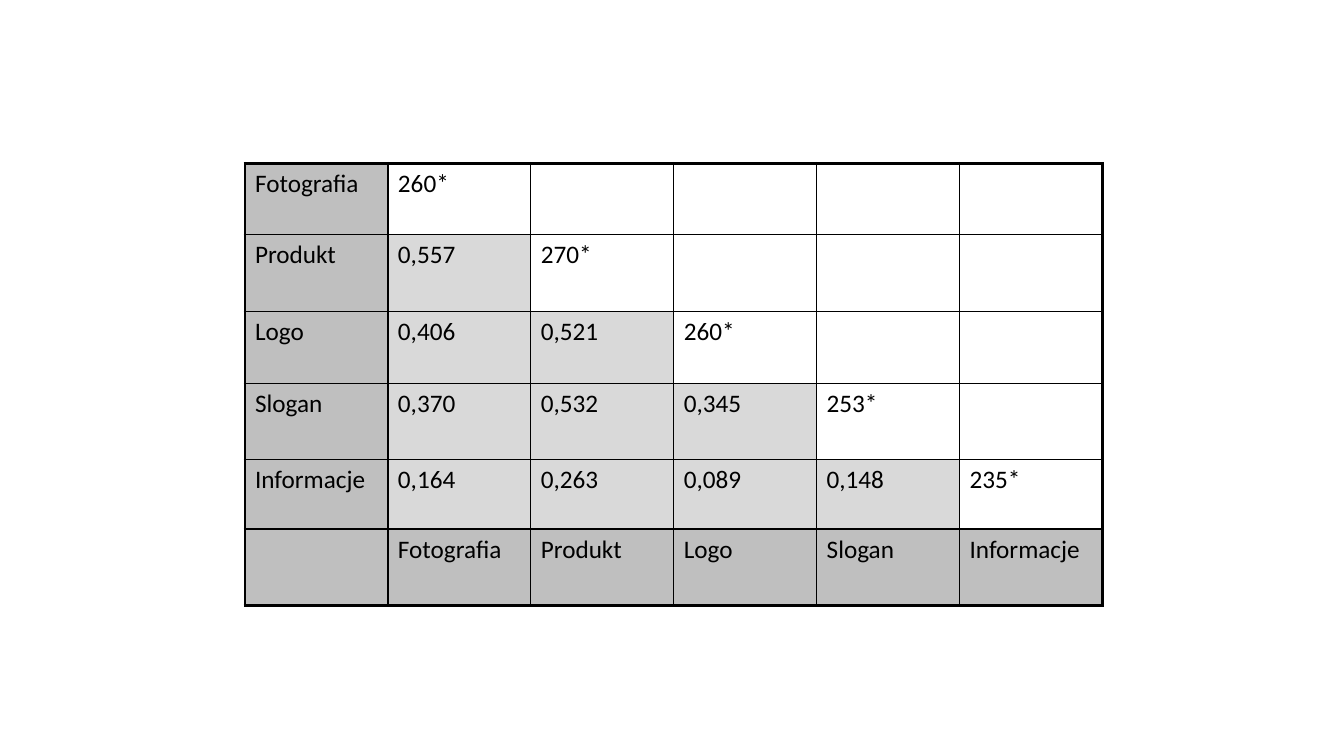
from dataclasses import dataclass

from lxml import etree
from pptx import Presentation
from pptx import util as u
from pptx.dml.color import RGBColor
from pptx.oxml import ns


@dataclass(frozen=True)
class Theme:
    font: str = "Calibri"
    size: float = 18
    ink: str = "000000"
    header: str = "BFBFBF"
    value: str = "D9D9D9"
    outer_line: float = 2.25
    inner_line: float = 1


theme = Theme()

labels = ["Fotografia", "Produkt", "Logo", "Slogan", "Informacje"]
# Lower triangle: the last entry of each row lies on the diagonal.
triangle = [
    ["260*"],
    ["0,557", "270*"],
    ["0,406", "0,521", "260*"],
    ["0,370", "0,532", "0,345", "253*"],
    ["0,164", "0,263", "0,089", "0,148", "235*"],
]
rows = [[label, *values] for label, values in zip(labels, triangle)]
rows.append(["", *labels])
row_heights = [51.2, 54.7, 51.2, 54.7, 49.5, 54.7]
col_width = 102.1
n = len(rows)


def add_border(cell, side, width):
    tc_pr = cell._tc.get_or_add_tcPr()
    ln = etree.SubElement(tc_pr, ns.qn(f"a:ln{side}"), w=str(u.Pt(width)))
    fill = etree.SubElement(ln, ns.qn("a:solidFill"))
    etree.SubElement(fill, ns.qn("a:srgbClr"), val=theme.ink)


prs = Presentation()
prs.slide_width, prs.slide_height = u.Pt(960), u.Pt(540)
s = prs.slides.add_slide(prs.slide_layouts[6])

frame = s.shapes.add_table(n, n, u.Pt(175), u.Pt(116.6),
                           u.Pt(n * col_width), u.Pt(sum(row_heights)))
table = frame.table
table.first_row = table.horz_banding = False
for column in table.columns:
    column.width = u.Pt(col_width)
for row, height in zip(table.rows, row_heights):
    row.height = u.Pt(height)

for i, texts in enumerate(rows):
    for j in range(n):
        cell = table.cell(i, j)
        edges = {"L": j == 0, "R": j == n - 1, "T": i == 0, "B": i == n - 1}
        for side, is_outer in edges.items():
            add_border(cell, side, theme.outer_line if is_outer else theme.inner_line)

        if j == 0 or i == n - 1:
            cell.fill.solid()
            cell.fill.fore_color.rgb = RGBColor.from_string(theme.header)
        elif j <= i:
            cell.fill.solid()
            cell.fill.fore_color.rgb = RGBColor.from_string(theme.value)
        else:
            cell.fill.background()

        if j < len(texts) and texts[j]:
            r = cell.text_frame.paragraphs[0].add_run()
            r.text = texts[j]
            r.font.name = theme.font
            r.font.size = u.Pt(theme.size)
            r.font.color.rgb = RGBColor.from_string(theme.ink)

prs.save("out.pptx")
